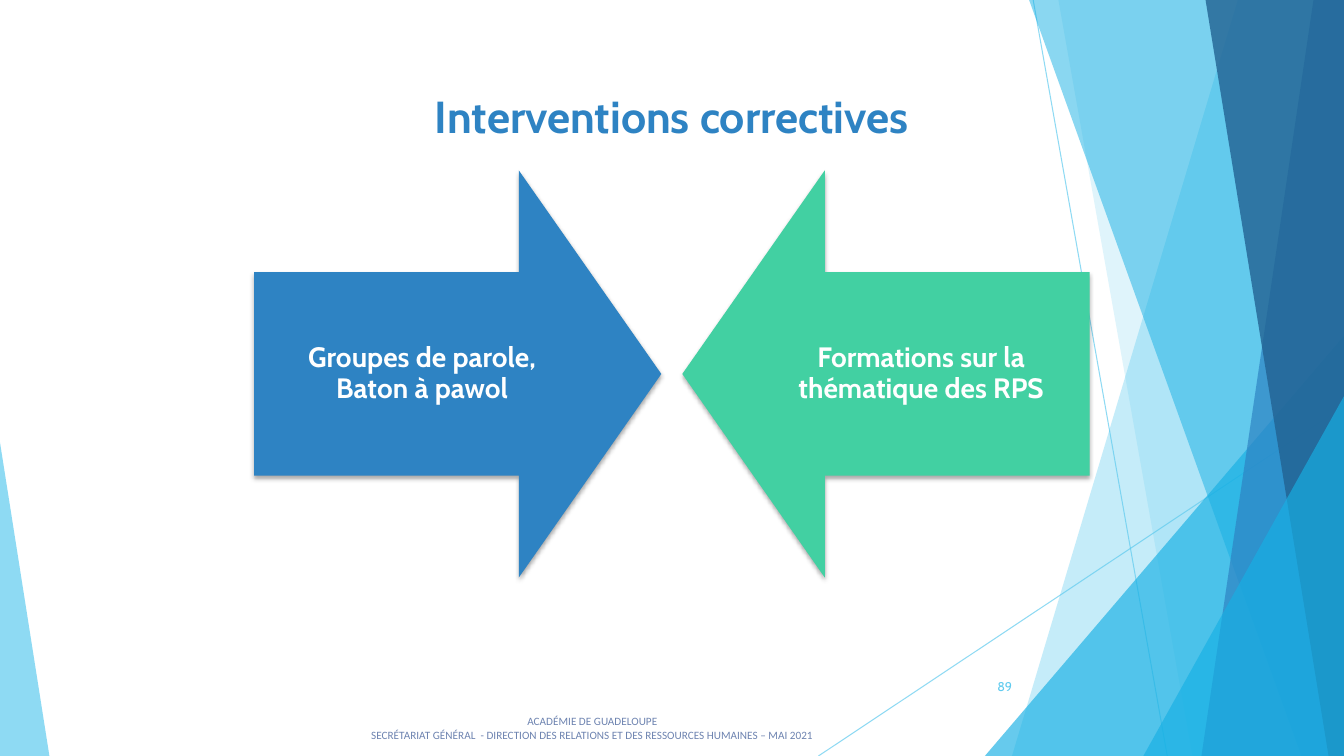
from lxml import etree
from pptx import Presentation
from pptx.dml.color import RGBColor
from pptx.enum import shapes, text
from pptx.oxml import ns
from pptx.util import Pt

WIDE, HIGH = 960, 540
HUES = {"sky": "5FCBEF", "cyan": "17B0E4", "blue": "2E83C3", "navy": "226292",
        "green": "42D0A2", "white": "FFFFFF", "black": "000000", "slate": "6D83B0"}
KIND = shapes.MSO_SHAPE


def color(name):
    """Return the named colour."""
    return RGBColor.from_string(HUES[name])


def sub(node, tag, **attrs):
    """Append a DrawingML element with attributes."""
    return etree.SubElement(node, ns.qn(tag), {k: str(v) for k, v in attrs.items()})


def fade(item, alpha):
    """Give an item's colour an opacity in percent."""
    for node in item._element.spPr.xpath(".//a:srgbClr"):
        sub(node, "a:alpha", val=alpha * 1000)


def paint(shape, hue, alpha=100):
    """Fill a shape without outline or shadow."""
    shape.fill.solid()
    shape.fill.fore_color.rgb = color(hue)
    shape.line.fill.background()
    shape.shadow.inherit = False
    if alpha < 100:
        fade(shape, alpha)


def ray(slide, start, end):
    """Draw a thin translucent line."""
    line = slide.shapes.add_connector(
        shapes.MSO_CONNECTOR.STRAIGHT, *map(Pt, start + end))
    line.line.width = Pt(0.75)
    line.line.color.rgb = color("sky")
    fade(line, 70)
    sub(line._element.spPr, "a:effectLst")


def band(slide, top, foot, hue, alpha):
    """Draw a slanted band reaching the right edge."""
    form = slide.shapes.build_freeform(Pt(top), 0)
    ends = [(WIDE, 0), (WIDE, HIGH), (foot, HIGH)]
    form.add_line_segments([(Pt(x), Pt(y)) for x, y in ends], close=True)
    paint(form.convert_to_shape(), hue, alpha)


def wedge(slide, left, top, width, peak, hue, alpha):
    """Draw a right triangle standing on the bottom edge."""
    shape = slide.shapes.add_shape(
        KIND.ISOSCELES_TRIANGLE, *map(Pt, (left, top, width, HIGH - top)))
    shape.adjustments[0] = peak
    paint(shape, hue, alpha)


def arrow(slide, kind, left, hue):
    """Draw a block arrow with a soft shadow."""
    shape = slide.shapes.add_shape(kind, *map(Pt, (left, 121.7, 290.9, 290.9)))
    shape.adjustments[0] = 0.5
    shape.adjustments[1] = 0.35
    paint(shape, hue)
    glow = shape._element.spPr.find(ns.qn("a:effectLst"))
    cast = sub(glow, "a:outerShdw", blurRad=Pt(3), dist=Pt(2), dir=5400000,
               algn="ctr", rotWithShape=0)
    fade_to = sub(cast, "a:srgbClr", val=HUES["black"])
    sub(fade_to, "a:alpha", val=35000)


def write(slide, words, box, size, hue, font="Cabin", bold=False, align="CENTER",
          anchor="MIDDLE", inset=None, gap=None):
    """Place formatted text, one paragraph per line."""
    frame = slide.shapes.add_textbox(*map(Pt, box)).text_frame
    frame.word_wrap = True
    frame.vertical_anchor = text.MSO_ANCHOR[anchor]
    if inset is not None:
        frame.margin_left = frame.margin_right = Pt(inset)
        frame.margin_top = frame.margin_bottom = Pt(inset)
    frame.text = words
    for para in frame.paragraphs:
        para.alignment = text.PP_ALIGN[align]
        para.line_spacing = gap
        para.font.name = font
        para.font.size = Pt(size)
        para.font.bold = bold
        para.font.color.rgb = color(hue)


def decor(slide):
    """Draw the facets along both edges."""
    ray(slide, (738, 0), (833.8, HIGH))
    ray(slide, (WIDE, 290.2), (584.6, HIGH))
    band(slide, 884.2, 722.9, "sky", 36)
    band(slide, 756, 851.8, "sky", 20)
    wedge(slide, 703.5, 239.8, 256.5, 1, "cyan", 66)
    band(slide, 735.1, 929.5, "cyan", 50)
    band(slide, 938.2, 858.2, "blue", 70)
    band(slide, 861.1, 949, "navy", 80)
    wedge(slide, 816.7, 283, 143.3, 1, "cyan", 66)
    wedge(slide, 0, 316.1, 35.3, 0, "sky", 70)


def main():
    """Build and save the slide."""
    deck = Presentation()
    deck.slide_width, deck.slide_height = Pt(WIDE), Pt(HIGH)
    slide = deck.slides.add_slide(deck.slide_layouts[6])
    decor(slide)
    write(slide, "Interventions correctives", (80, 36.7, 800, 92.2), 32, "blue",
          bold=True)
    for kind, left, hue, start, words in (
            (KIND.RIGHT_ARROW, 181.5, "blue", 181.5, "Groupes de parole, Baton à pawol"),
            (KIND.LEFT_ARROW, 487.4, "green", 538,
             "Formations sur la thématique des RPS")):
        arrow(slide, kind, left, hue)
        write(slide, words, (start, 194.4, 240, 145.4), 20, "white",
              bold=True, inset=11.5, gap=0.9)
    write(slide, "89", (676, 476, 54, 28.8), 9, "sky", align="RIGHT")
    write(slide, "ACADÉMIE DE GUADELOUPE\nSECRÉTARIAT GÉNÉRAL  - DIRECTION DES "
          "RELATIONS ET DES RESSOURCES HUMAINES – MAI 2021",
          (236, 506.9, 374.4, 33), 8, "slate", font="Calibri", anchor="TOP")
    deck.save("out.pptx")


if __name__ == "__main__":
    main()
